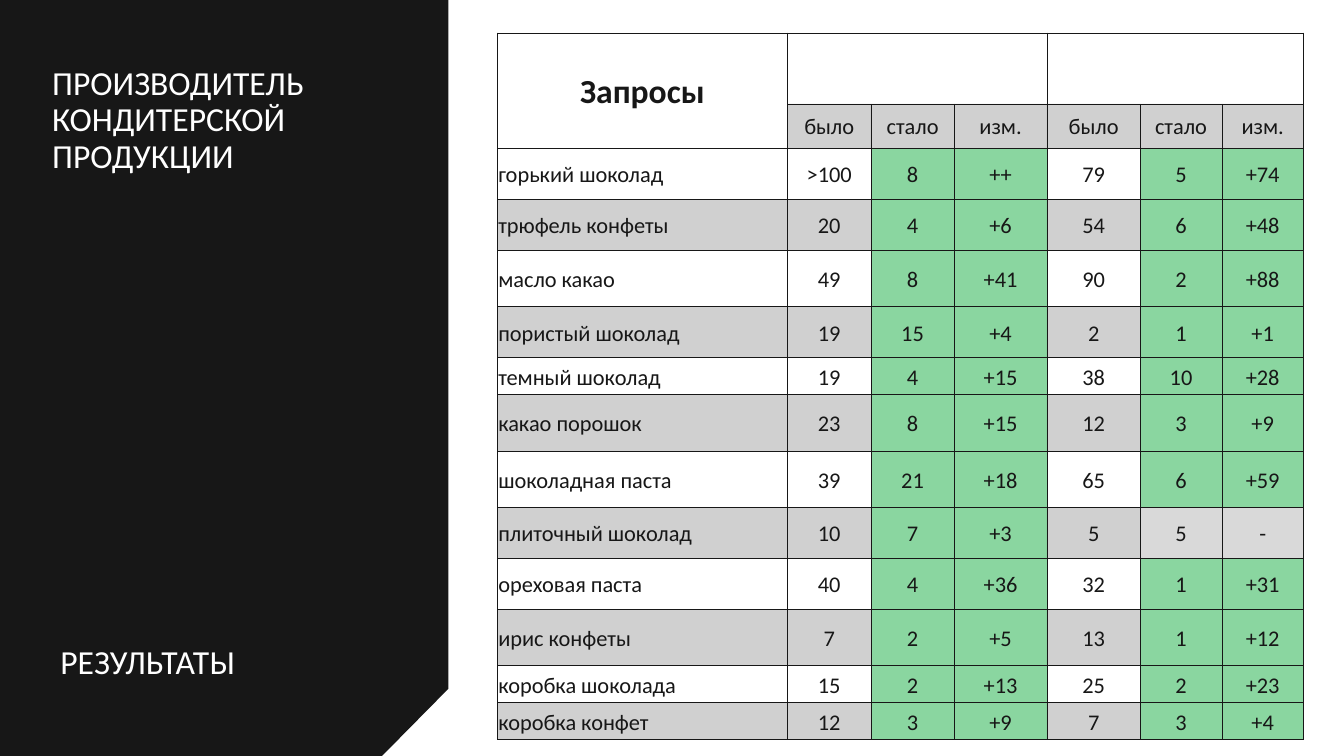
from lxml import etree
from pptx import Presentation
from pptx import util as u
from pptx.dml.color import RGBColor
from pptx.enum import text
from pptx.oxml.ns import qn

INK, WHITE, GREEN, GREY = "171717", "FFFFFF", "8AD6A0", "D9D9D9"

COLUMN_WIDTHS = [21.6, 6.2, 6.2, 6.9, 6.95, 6.05, 6.1]
HEADER_HEIGHTS = [9.4, 5.85]
MEASURES = ["было", "стало", "изм."]
QUERIES = [
    (6.75, "горький шоколад", ">100", "8", "++", "79", "5", "+74"),
    (6.75, "трюфель конфеты", "20", "4", "+6", "54", "6", "+48"),
    (7.45, "масло какао", "49", "8", "+41", "90", "2", "+88"),
    (6.75, "пористый шоколад", "19", "15", "+4", "2", "1", "+1"),
    (4.9, "темный шоколад", "19", "4", "+15", "38", "10", "+28"),
    (7.45, "какао порошок", "23", "8", "+15", "12", "3", "+9"),
    (7.45, "шоколадная паста", "39", "21", "+18", "65", "6", "+59"),
    (6.75, "плиточный шоколад", "10", "7", "+3", "5", "5", "-"),
    (6.75, "ореховая паста", "40", "4", "+36", "32", "1", "+31"),
    (7.45, "ирис конфеты", "7", "2", "+5", "13", "1", "+12"),
    (4.9, "коробка шоколада", "15", "2", "+13", "25", "2", "+23"),
    (4.9, "коробка конфет", "12", "3", "+9", "7", "3", "+4"),
]


def color(code):
    return RGBColor.from_string(code)


class Slide:
    """Draws styled elements on one slide, with lengths in percent of its size."""

    font = "Calibri"

    def __init__(self, deck):
        self.width, self.height = deck.slide_width, deck.slide_height
        self.page = deck.slides.add_slide(deck.slide_layouts[6])

    def across(self, share):
        return round(self.width * share / 100)

    def down(self, share):
        return round(self.height * share / 100)

    def area(self, left, top, width, height):
        return self.across(left), self.down(top), self.across(width), self.down(height)

    def style_text(self, para, words, size, shade, spacing, bold=False):
        para.text = words
        para.line_spacing = spacing
        para.font.name = self.font
        para.font.size = u.Pt(size)
        para.font.bold = bold
        para.font.color.rgb = color(shade)

    def panel(self, corners, shade):
        start, *others = [(self.across(x), self.down(y)) for x, y in corners]
        outline = self.page.shapes.build_freeform(*start)
        outline.add_line_segments(others, close=True)
        shape = outline.convert_to_shape()
        shape.shadow.inherit = False
        shape.fill.solid()
        shape.fill.fore_color.rgb = color(shade)
        shape.line.fill.background()

    def label(self, words, *place):
        box = self.page.shapes.add_textbox(*self.area(*place))
        box.text_frame.word_wrap = True
        self.style_text(box.text_frame.paragraphs[0], words, 24, WHITE, 0.9)

    def table(self, left, top, widths, heights):
        frame = self.page.shapes.add_table(
            len(heights), len(widths), *self.area(left, top, sum(widths), sum(heights)))
        table = frame.table
        table.first_row = table.horz_banding = False
        for column, width in zip(table.columns, widths):
            column.width = self.across(width)
        for row, height in zip(table.rows, heights):
            row.height = self.down(height)
        for cell in table.iter_cells():
            self.border(cell)
            cell.fill.background()
        return table

    def border(self, cell):
        properties = cell._tc.get_or_add_tcPr()
        for side in ("a:lnL", "a:lnR", "a:lnT", "a:lnB"):
            line = etree.SubElement(properties, qn(side), w=str(u.Pt(0.25)))
            fill = etree.SubElement(line, qn("a:solidFill"))
            etree.SubElement(fill, qn("a:srgbClr"), val=INK)

    def cell(self, cell, words, shade=None, opacity=100, size=16, bold=False,
             centered=True, sides=0.01, above=0.01):
        cell.margin_left = cell.margin_right = u.Inches(sides)
        cell.margin_top, cell.margin_bottom = u.Inches(above), 0
        cell.vertical_anchor = text.MSO_ANCHOR.MIDDLE
        para = cell.text_frame.paragraphs[0]
        self.style_text(para, words, size, INK, 1.07, bold)
        para.space_after = u.Pt(8)
        para.alignment = text.PP_ALIGN.CENTER if centered else text.PP_ALIGN.LEFT
        if shade:
            cell.fill.solid()
            cell.fill.fore_color.rgb = color(shade)
            if opacity < 100:
                tint = cell._tc.tcPr.find(qn("a:solidFill")).find(qn("a:srgbClr"))
                etree.SubElement(tint, qn("a:alpha"), val=str(opacity * 1000))


def add_results(slide):
    heights = HEADER_HEIGHTS + [query[0] for query in QUERIES]
    table = slide.table(37, 4.35, COLUMN_WIDTHS, heights)
    table.cell(0, 0).merge(table.cell(1, 0))
    for first in (1, 4):
        table.cell(0, first).merge(table.cell(0, first + 2))
    slide.cell(table.cell(0, 0), "Запросы", size=24, bold=True, sides=0.07, above=0)
    for column, measure in enumerate(MEASURES * 2, start=1):
        slide.cell(table.cell(1, column), measure, INK, 20, sides=0.07, above=0)
    for row, (_, *values) in enumerate(QUERIES, start=2):
        for column, value in enumerate(values):
            shade, opacity = (INK, 20) if row % 2 else (None, 100)
            if column in (2, 3, 5, 6):
                unchanged = column > 3 and values[6] == "-"
                shade, opacity = GREY if unchanged else GREEN, 100
            slide.cell(table.cell(row, column), value, shade, opacity, centered=column > 0)


def main():
    deck = Presentation()
    deck.slide_width, deck.slide_height = u.Inches(13.33), u.Inches(7.5)
    slide = Slide(deck)
    slide.panel([(0, 0), (33.37, 0), (33.37, 91.1), (28.43, 100), (0, 100)], INK)
    add_results(slide)
    slide.label("ПРОИЗВОДИТЕЛЬ КОНДИТЕРСКОЙ ПРОДУКЦИИ", 3.15, 8.13, 28.2, 31.7)
    slide.label("РЕЗУЛЬТАТЫ", 3.75, 84.7, 31, 13)
    deck.save("out.pptx")


if __name__ == "__main__":
    main()
